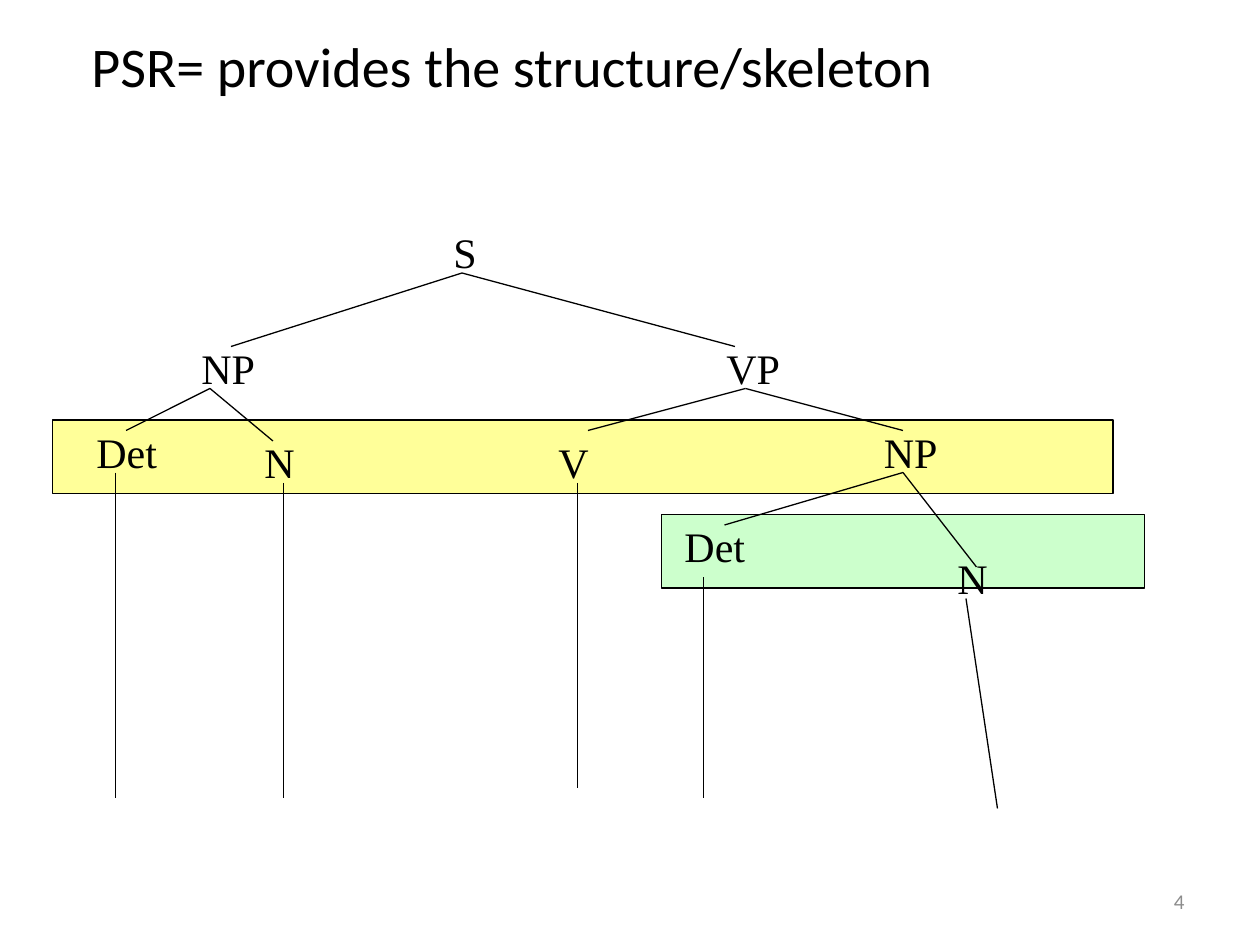
from dataclasses import dataclass
from typing import Any

from lxml import etree
from pptx import Presentation
from pptx import util as u
from pptx.dml import color
from pptx.enum import shapes, text
from pptx.oxml import ns

PX = u.Inches(1) // 120


@dataclass(frozen=True)
class Theme:
    ink: str = "000000"
    muted: str = "8C8C8C"
    surface_band: str = "FFFF99"
    object_band: str = "CCFFCC"
    heading_font: str = "Calibri"
    tree_font: str = "Times New Roman"
    title_size: int = 32
    node_size: int = 24
    number_size: int = 12
    line_width: float = 0.75


@dataclass(frozen=True)
class Band:
    left: int
    top: int
    width: int
    fill: str


@dataclass(frozen=True)
class Node:
    label: str
    left: int
    top: int
    width: int


@dataclass(frozen=True)
class Branch:
    start: tuple[int, int]
    ends: tuple[tuple[int, int], ...]


THEME = Theme()
BAND_HEIGHT = 70
NODE_HEIGHT = 60

BANDS = (
    Band(630, 490, 460, THEME.object_band),
    Band(50, 400, 1010, THEME.surface_band),
)
NODES = (
    Node("S", 420, 210, 50),
    Node("NP", 180, 320, 90),
    Node("VP", 680, 320, 90),
    Node("Det", 80, 400, 90),
    Node("N", 240, 410, 50),
    Node("V", 520, 410, 80),
    Node("NP", 830, 400, 90),
    Node("Det", 640, 490, 90),
    Node("N", 900, 520, 80),
)
BRANCHES = (
    Branch((440, 260), ((220, 330), (700, 330))),
    Branch((200, 370), ((120, 410), (260, 420))),
    Branch((710, 370), ((560, 410), (860, 410))),
    Branch((860, 450), ((690, 500), (930, 540))),
    Branch((110, 450), ((110, 760),)),
    Branch((270, 460), ((270, 760),)),
    Branch((550, 460), ((550, 750),)),
    Branch((670, 550), ((670, 760),)),
    Branch((920, 570), ((950, 770),)),
)


def emu(*lengths: int) -> list[int]:
    return [length * PX for length in lengths]


def rgb(value: str) -> color.RGBColor:
    return color.RGBColor.from_string(value)


def apply(target: Any, values: dict[str, Any]) -> None:
    for name, value in values.items():
        setattr(target, name, value)


def write(box: Any, words: str, font: str, size: int, ink: str,
          frame: dict[str, Any], para_format: dict[str, Any]) -> Any:
    apply(box.text_frame, {"word_wrap": True, **frame})
    para = box.text_frame.paragraphs[0]
    apply(para, para_format)
    span = para.add_run()
    span.text = words
    apply(span.font, {"name": font, "size": u.Pt(size)})
    span.font.color.rgb = rgb(ink)
    return para


def draw_title(page: Any, words: str) -> None:
    title = page.shapes.title
    left, top, width, height = emu(75, 40, 1050, 60)
    apply(title, {"left": left, "top": top, "width": width, "height": height})
    write(title, words, THEME.heading_font, THEME.title_size, THEME.ink,
          {"vertical_anchor": text.MSO_ANCHOR.BOTTOM,
           "auto_size": text.MSO_AUTO_SIZE.NONE},
          {"alignment": text.PP_ALIGN.LEFT, "line_spacing": 1.4})


def draw_band(page: Any, band: Band) -> None:
    box = page.shapes.add_shape(
        shapes.MSO_SHAPE.RECTANGLE,
        *emu(band.left, band.top, band.width, BAND_HEIGHT))
    box.shadow.inherit = False
    box.fill.solid()
    box.fill.fore_color.rgb = rgb(band.fill)
    box.line.color.rgb = rgb(THEME.ink)
    box.line.width = u.Pt(THEME.line_width)


def draw_node(page: Any, node: Node) -> None:
    box = page.shapes.add_textbox(
        *emu(node.left, node.top, node.width, NODE_HEIGHT))
    para = write(box, node.label, THEME.tree_font, THEME.node_size, THEME.ink,
                 {"auto_size": text.MSO_AUTO_SIZE.SHAPE_TO_FIT_TEXT}, {})
    before = etree.SubElement(para._p.get_or_add_pPr(), ns.qn("a:spcBef"))
    etree.SubElement(before, ns.qn("a:spcPct")).set("val", "50000")


def draw_branch(page: Any, branch: Branch) -> None:
    for end in branch.ends:
        line = page.shapes.add_connector(
            shapes.MSO_CONNECTOR.STRAIGHT, *emu(*branch.start, *end))
        line.line.color.rgb = rgb(THEME.ink)
        line.line.width = u.Pt(THEME.line_width)
        etree.SubElement(line._element.spPr, ns.qn("a:effectLst"))


def draw_number(page: Any, number: str) -> None:
    box = page.shapes.add_textbox(*emu(860, 834, 280, 48))
    write(box, number, THEME.heading_font, THEME.number_size, THEME.muted,
          {"vertical_anchor": text.MSO_ANCHOR.MIDDLE},
          {"alignment": text.PP_ALIGN.RIGHT})


def main() -> None:
    deck = Presentation()
    apply(deck, {"slide_width": 1200 * PX, "slide_height": 900 * PX})
    page = deck.slides.add_slide(deck.slide_layouts.get_by_name("Title Only"))
    draw_title(page, "PSR= provides the structure/skeleton")
    draw_number(page, "4")
    for band in BANDS:
        draw_band(page, band)
    for node in NODES:
        draw_node(page, node)
    for branch in BRANCHES:
        draw_branch(page, branch)
    deck.save("out.pptx")


if __name__ == "__main__":
    main()
